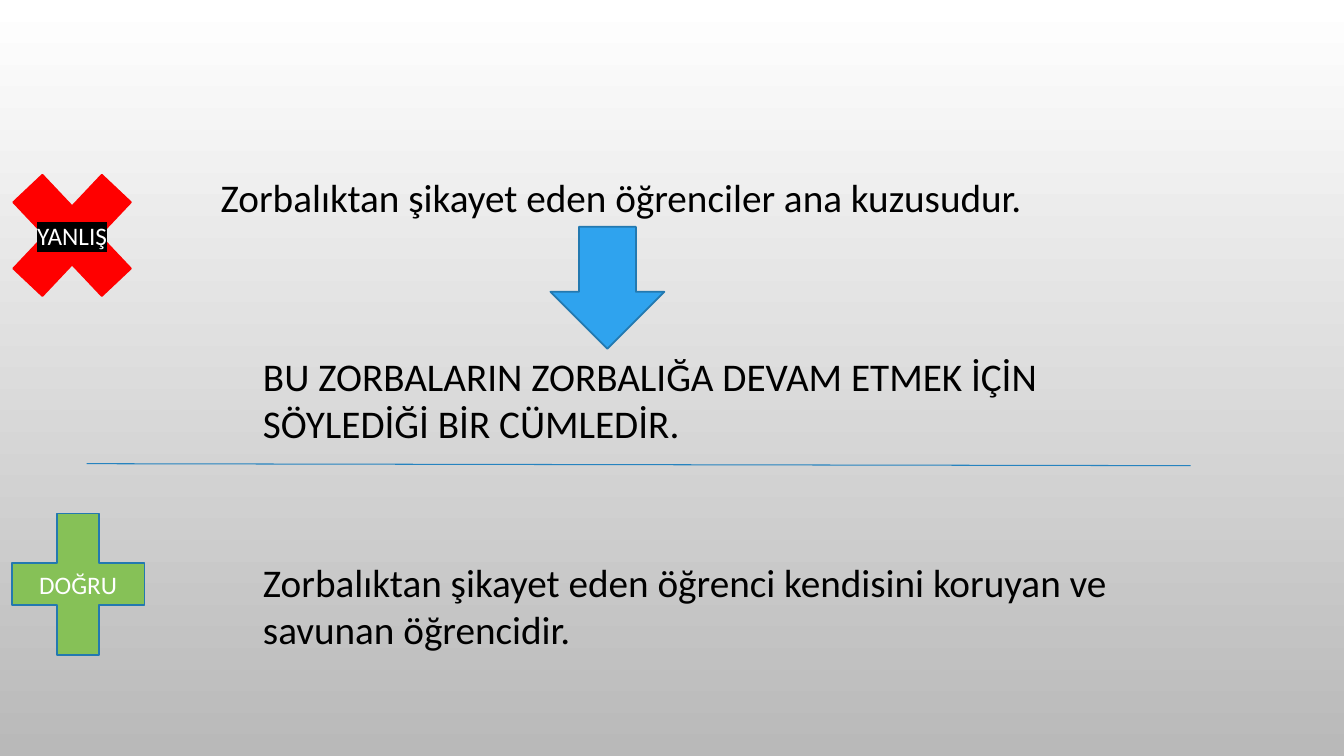
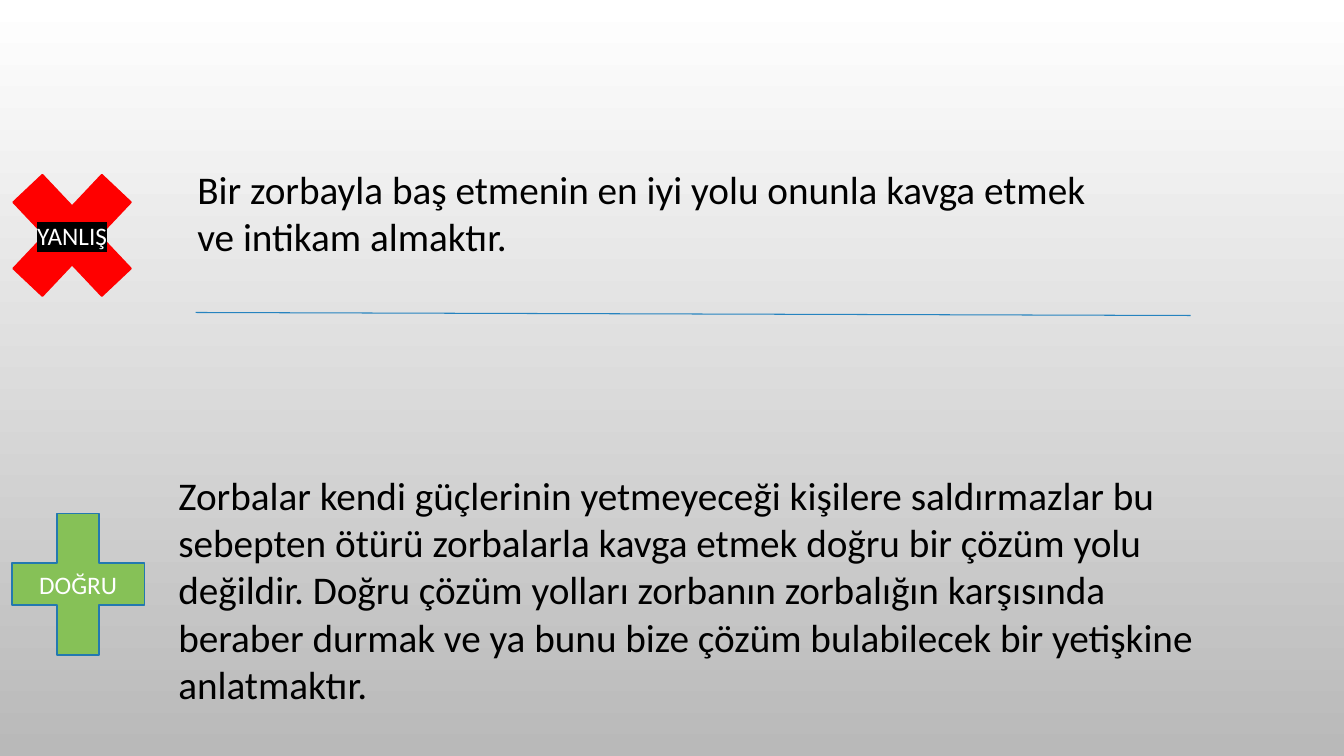
from dataclasses import dataclass

from lxml.etree import SubElement
from pptx import Presentation
from pptx.dml.color import RGBColor
from pptx.enum.shapes import MSO_CONNECTOR, MSO_SHAPE
from pptx.enum.text import MSO_ANCHOR, MSO_AUTO_SIZE, PP_ALIGN
from pptx.oxml import parse_xml
from pptx.oxml.ns import nsdecls, qn
from pptx.util import Inches, Pt


@dataclass(frozen=True)
class Theme:
    """Colours, font and sizes of the deck."""
    font: str = "Calibri"
    body: int = 28
    label: int = 18
    edge: float = 1.25
    hair: float = 0.75
    black: str = "000000"
    white: str = "FFFFFF"
    grey: str = "B9B9B9"
    red: str = "FF0000"
    green: str = "86C157"
    blue: str = "2FA3EE"
    navy: str = "2379B0"
    rule: str = "2683BF"


THEME = Theme()
WRONG = (-0.13, 1.44, 1.69, 1.79)
RIGHT = (-0.12, 4.84, 1.79, 1.91)


def rgb(code):
    """Turn a hex code into a colour."""
    return RGBColor.from_string(code)


def write(para, text, size, color, glow=None):
    """Add one run, with a highlight if a glow colour is given."""
    run = para.add_run()
    run.text = text
    run.font.size = Pt(size)
    run.font.name = THEME.font
    run.font.color.rgb = rgb(color)
    if glow:
        mark = parse_xml(f'<a:highlight {nsdecls("a")}><a:srgbClr val="{glow}"/></a:highlight>')
        run.font.fill._xPr.find(qn("a:solidFill")).addnext(mark)


def add_text(slide, box, text):
    """Place a body sentence in its box."""
    frame = slide.shapes.add_textbox(*map(Inches, box)).text_frame
    frame.word_wrap = True
    frame.auto_size = MSO_AUTO_SIZE.SHAPE_TO_FIT_TEXT
    write(frame.paragraphs[0], text, THEME.body, THEME.black)


def add_sign(slide, box, kind, fill, edge, text=None, glow=None):
    """Place an outlined shape, with a centred label if given."""
    sign = slide.shapes.add_shape(kind, *map(Inches, box))
    sign.shadow.inherit = False
    sign.fill.solid()
    sign.fill.fore_color.rgb = rgb(fill)
    sign.line.color.rgb = rgb(edge)
    sign.line.width = Pt(THEME.edge)
    if text:
        frame = sign.text_frame
        frame.vertical_anchor = MSO_ANCHOR.MIDDLE
        para = frame.paragraphs[0]
        para.alignment = PP_ALIGN.CENTER
        write(para, text, THEME.label, THEME.white, glow)


def add_rule(slide, box):
    """Draw the line across its box, from top left to bottom right."""
    left, top, width, height = box
    ends = (left, top, left + width, top + height)
    line = slide.shapes.add_connector(MSO_CONNECTOR.STRAIGHT, *map(Inches, ends))
    line.line.color.rgb = rgb(THEME.rule)
    line.line.width = Pt(THEME.hair)
    SubElement(line._element.spPr, qn("a:effectLst"))


def add_pair(deck, wrong, rule, right):
    """Build a slide with a wrong claim above a rule and the right one below."""
    slide = deck.slides.add_slide(deck.slide_layouts[6])
    add_text(slide, *wrong)
    add_sign(slide, WRONG, MSO_SHAPE.MATH_MULTIPLY, THEME.red, THEME.red, "YANLIŞ", THEME.black)
    add_sign(slide, RIGHT, MSO_SHAPE.MATH_PLUS, THEME.green, THEME.navy, "DOĞRU")
    add_text(slide, *right)
    add_rule(slide, rule)
    return slide


def add_reason(slide, box, text):
    """Place a down arrow and, beneath it, the reason."""
    left, top, width, height = box
    add_sign(slide, (left + 2.95, top, 1.13, 1.21), MSO_SHAPE.DOWN_ARROW, THEME.blue, THEME.navy)
    add_text(slide, (left, top + 1.2, width, height - 1.2), text)


def paint(deck):
    """Give every slide the grey gradient."""
    fill = deck.slide_master.background.fill
    fill.gradient()
    fill.gradient_angle = 270
    for stop, place, color in zip(fill.gradient_stops, (0, 1), (THEME.white, THEME.grey)):
        stop.position = place
        stop.color.rgb = rgb(color)


def main():
    """Build and save the deck."""
    deck = Presentation()
    deck.slide_width, deck.slide_height = Inches(13.33), Inches(7.5)
    paint(deck)
    first = add_pair(
        deck,
        ((2.09, 1.67, 8.41, 0.57), "Zorbalıktan şikayet eden öğrenciler ana kuzusudur."),
        (0.86, 4.6, 10.95, 0.02),
        ((2.51, 5.49, 9.05, 1.04),
         "Zorbalıktan şikayet eden öğrenci kendisini koruyan ve savunan öğrencidir."),
    )
    add_reason(first, (2.51, 2.25, 8.32, 2.24),
               "BU ZORBALARIN ZORBALIĞA DEVAM ETMEK İÇİN SÖYLEDİĞİ BİR CÜMLEDİR.")
    add_pair(
        deck,
        ((1.86, 1.59, 9.03, 1.04),
         "Bir zorbayla baş etmenin en iyi yolu onunla kavga etmek ve intikam almaktır."),
        (1.94, 3.1, 9.87, 0.03),
        ((1.67, 4.63, 10.32, 2.46),
         "Zorbalar kendi güçlerinin yetmeyeceği kişilere saldırmazlar bu sebepten ötürü "
         "zorbalarla kavga etmek doğru bir çözüm yolu değildir. Doğru çözüm yolları "
         "zorbanın zorbalığın karşısında beraber durmak ve ya bunu bize çözüm bulabilecek "
         "bir yetişkine anlatmaktır."),
    )
    deck.save("out.pptx")


if __name__ == "__main__":
    main()
